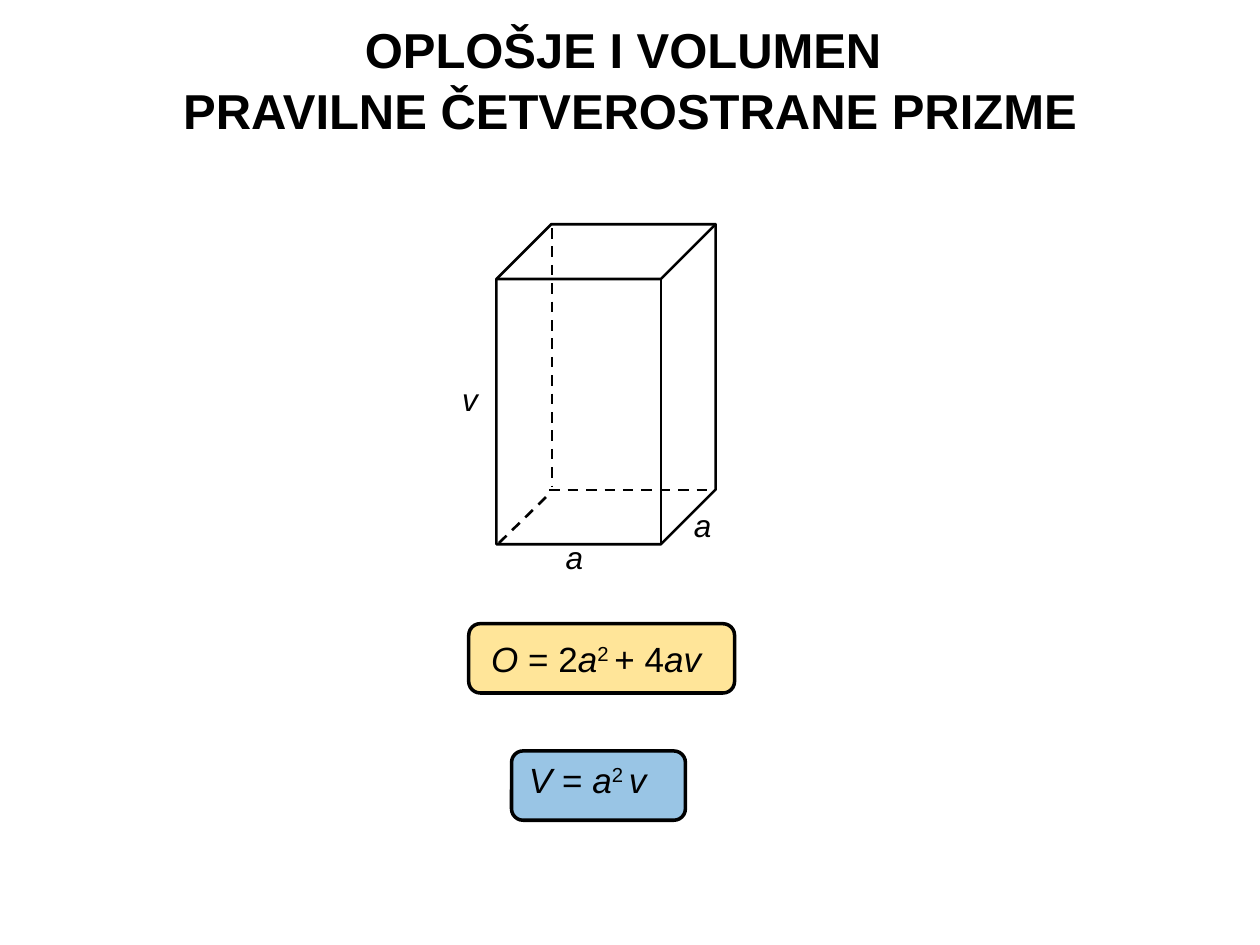
from dataclasses import dataclass

from lxml import etree
from pptx import Presentation
from pptx.dml.color import RGBColor
from pptx.enum.dml import MSO_LINE
from pptx.enum.shapes import MSO_CONNECTOR, MSO_SHAPE
from pptx.enum.text import PP_ALIGN
from pptx.oxml.ns import qn
from pptx.util import Inches, Pt

BLACK = "000000"
FONT = "Arial"
CUBE, ROUNDED = MSO_SHAPE.CUBE, MSO_SHAPE.ROUNDED_RECTANGLE
STRAIGHT = MSO_CONNECTOR.STRAIGHT
DASH = MSO_LINE.DASH
CENTER = PP_ALIGN.CENTER

Box = tuple[float, float, float, float]


@dataclass
class Term:
    text: str
    italic: bool = False
    superscript: bool = False


@dataclass
class Formula:
    frame: Box
    fill: str
    text_box: Box
    terms: list[Term]


@dataclass
class Edge:
    start: tuple[float, float]
    end: tuple[float, float]


def color(value: str) -> RGBColor:
    return RGBColor.from_string(value)


def add_outline(slide, preset, box: Box, width: float, fill: str = ""):
    """Draw a black-edged shape, with a 40 % opaque fill if one is given."""
    shape = slide.shapes.add_shape(preset, *map(Inches, box))
    shape.shadow.inherit = False
    shape.line.color.rgb = color(BLACK)
    shape.line.width = Pt(width)
    if fill:
        shape.fill.solid()
        shape.fill.fore_color.rgb = color(fill)
        tint = shape._element.spPr.find(f"{qn('a:solidFill')}/{qn('a:srgbClr')}")
        etree.SubElement(tint, qn("a:alpha")).set("val", "40000")
    else:
        shape.fill.background()


def add_hidden_edge(slide, edge: Edge):
    line = slide.shapes.add_connector(
        STRAIGHT, *map(Inches, edge.start + edge.end))
    line.line.color.rgb = color(BLACK)
    line.line.width = Pt(1.5)
    line.line.dash_style = DASH
    etree.SubElement(line._element.spPr, qn("a:effectLst"))


def add_text(slide, box: Box, lines: list[list[Term]], size: float,
             bold: bool = False, align=None, spacing: float = 1.0):
    frame = slide.shapes.add_textbox(*map(Inches, box)).text_frame
    frame.word_wrap = True
    for index, terms in enumerate(lines):
        paragraph = frame.add_paragraph() if index else frame.paragraphs[0]
        paragraph.alignment = align
        paragraph.line_spacing = spacing
        font = paragraph.font
        font.name, font.size, font.bold = FONT, Pt(size), bold
        font.color.rgb = color(BLACK)
        for term in terms:
            run = paragraph.add_run()
            run.text = term.text
            run.font.italic = term.italic
            if term.superscript:
                run._r.get_or_add_rPr().set("baseline", "30000")


FORMULAS = [
    Formula((3.72, 4.95, 2.11, 0.55), "FFC000", (3.8, 5.01, 2.15, 0.44),
            [Term("O", italic=True), Term(" = 2"), Term("a", italic=True),
             Term("2 ", superscript=True), Term("+ 4"),
             Term("av", italic=True)]),
    Formula((4.06, 5.96, 1.38, 0.55), "0070C0", (4.1, 5.97, 1.24, 0.44),
            [Term("V", italic=True), Term(" = "), Term("a", italic=True),
             Term("2 ", superscript=True), Term("v", italic=True)]),
]
HIDDEN_EDGES = [
    Edge((4.38, 1.81), (4.38, 3.86)),
    Edge((4.36, 3.89), (5.68, 3.89)),
    Edge((3.96, 4.31), (4.37, 3.91)),
]
EDGE_LABELS = [("a", 4.39, 4.22), ("a", 5.41, 3.97), ("v", 3.57, 2.97)]
TITLE = ["OPLOŠJE I VOLUMEN ", "PRAVILNE ČETVEROSTRANE PRIZME"]


def main():
    deck = Presentation()
    deck.slide_width, deck.slide_height = Inches(10), Inches(7.5)
    slide = deck.slides.add_slide(deck.slide_layouts[6])

    add_text(slide, (0, 0.08, 10, 1.04), [[Term(line)] for line in TITLE],
             28, bold=True, align=CENTER, spacing=1.05)

    add_outline(slide, CUBE, (3.94, 1.78, 1.74, 2.54), 1.5)
    for edge in HIDDEN_EDGES:
        add_hidden_edge(slide, edge)
    for letter, left, top in EDGE_LABELS:
        add_text(slide, (left, top, 0.76, 0.52),
                 [[Term(letter, italic=True)]], 18)

    for formula in FORMULAS:
        add_outline(slide, ROUNDED, formula.frame, 2, formula.fill)
        add_text(slide, formula.text_box, [formula.terms], 20)

    deck.save("out.pptx")


if __name__ == "__main__":
    main()
